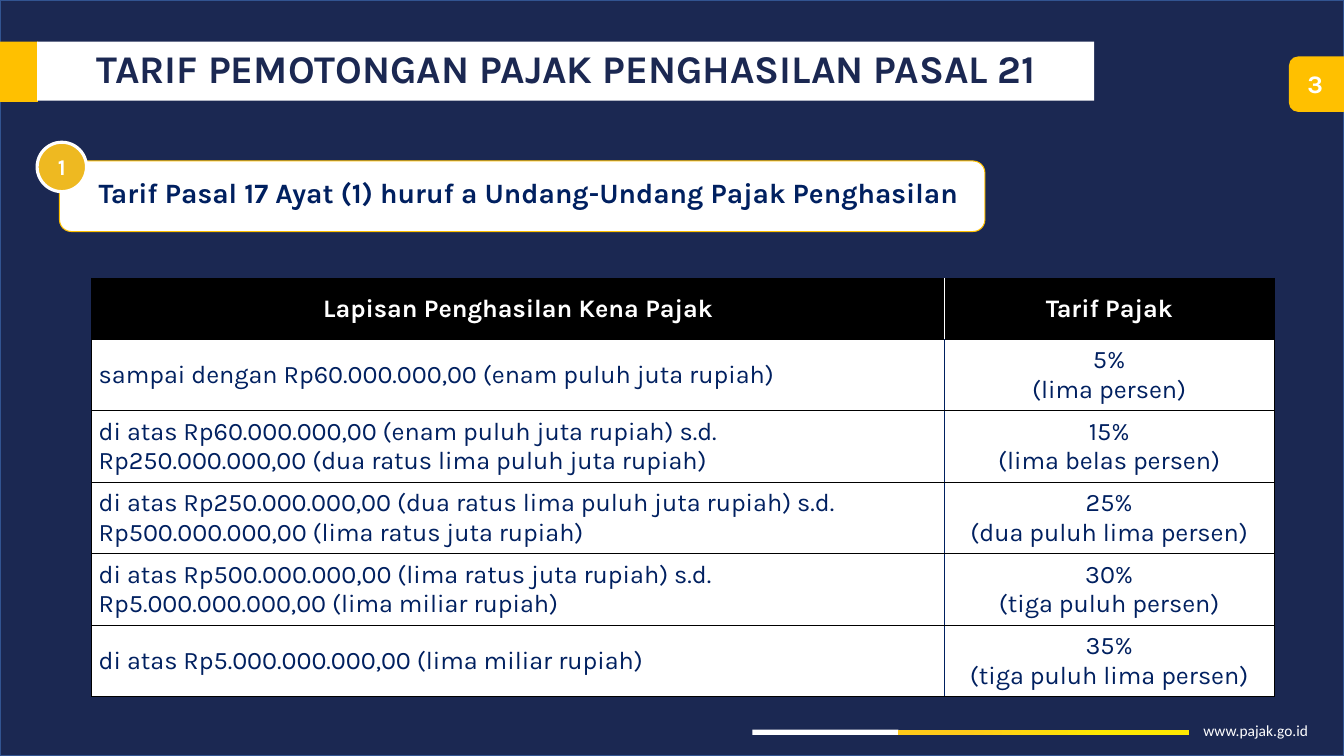
import pptx
import pptx.util
import pptx.dml.color
import pptx.enum.shapes
import pptx.enum.text
import pptx.oxml

Pt = pptx.util.Pt
RGB = pptx.dml.color.RGBColor.from_string
SHAPE = pptx.enum.shapes.MSO_SHAPE
ALIGN = pptx.enum.text.PP_ALIGN
MIDDLE = pptx.enum.text.MSO_ANCHOR.MIDDLE
COLORS = {
    "night": "1B2852", "edge": "325491", "amber": "FFC000", "gold": "EEB921",
    "sun": "FFCA1A", "lemon": "FEE801", "navy": "002060", "white": "FFFFFF", "black": "000000",
}

deck = pptx.Presentation()
deck.slide_width, deck.slide_height = Pt(960), Pt(540)
slide = deck.slides.add_slide(deck.slide_layouts[6])


def add_block(kind, left, top, width, height, fill, line=None, line_width=1):
    block = slide.shapes.add_shape(kind, Pt(left), Pt(top), Pt(width), Pt(height))
    block.shadow.inherit = False
    block.fill.solid()
    block.fill.fore_color.rgb = RGB(COLORS[fill])
    if line:
        block.line.color.rgb = RGB(COLORS[line])
        block.line.width = Pt(line_width)
    else:
        block.line.fill.background()
    return block


def write(frame, lines, size, color, bold=False, align=ALIGN.CENTER, font="Karla"):
    """Fill a text frame with one single-run paragraph per line."""
    frame.word_wrap = True
    for number, line in enumerate(lines):
        paragraph = frame.add_paragraph() if number else frame.paragraphs[0]
        paragraph.alignment = align
        run = paragraph.add_run()
        run.text = line
        run.font.name = font
        run.font.size = Pt(size)
        run.font.bold = bold
        run.font.color.rgb = RGB(COLORS[color])


# Background and page number
add_block(SHAPE.RECTANGLE, 0, 0, 960, 540, "night", "edge")
add_block(SHAPE.ROUNDED_RECTANGLE, 920.7, 40.3, 75, 39.6, "amber")
page_number = slide.shapes.add_textbox(Pt(919.4), Pt(45.4), Pt(40.3), Pt(29))
write(page_number.text_frame, ["3"], 18, "white", True)

# Footer
add_block(SHAPE.RECTANGLE, 537.5, 521.2, 104.2, 3.7, "white")
footer_stripe = add_block(SHAPE.RECTANGLE, 641.5, 521.2, 208, 3.7, "sun")
footer_stripe.fill.gradient()
footer_stripe.fill.gradient_angle = 0
for stop, position, color in zip(footer_stripe.fill.gradient_stops, (0.23, 0.71), ("sun", "lemon")):
    stop.position = position
    stop.color.rgb = RGB(COLORS[color])
website = slide.shapes.add_textbox(Pt(852.5), Pt(511.2), Pt(104.4), Pt(20.6))
write(website.text_frame, ["www.pajak.go.id"], 11, "white", align=ALIGN.LEFT, font="Calibri")

# Title
add_block(SHAPE.RECTANGLE, -11.5, 29.7, 38.6, 43, "amber")
title = add_block(SHAPE.RECTANGLE, 26.6, 29.7, 755, 42.3, "white")
title.text_frame.vertical_anchor = MIDDLE
write(title.text_frame, ["TARIF PEMOTONGAN PAJAK PENGHASILAN PASAL 21"], 28, "night", True)
title.text_frame.paragraphs[0].line_spacing = 0.9

# Numbered heading
heading_panel = add_block(SHAPE.ROUNDED_RECTANGLE, 42.5, 115, 661, 50.4, "white", "amber", 0.75)
heading_panel.adjustments[0] = 0.167
heading = slide.shapes.add_textbox(Pt(65.5), Pt(122.4), Pt(640), Pt(47.5))
write(heading.text_frame, ["Tarif Pasal 17 Ayat (1) huruf a Undang-Undang Pajak Penghasilan"],
      20, "navy", True, ALIGN.JUSTIFY)
heading_number = add_block(SHAPE.OVAL, 26.5, 101.6, 35.3, 35.3, "gold", "white", 2.25)
heading_number.text_frame.vertical_anchor = MIDDLE
write(heading_number.text_frame, ["1"], 16, "white", True)
for frame in (heading.text_frame, heading_number.text_frame):
    frame.margin_left = frame.margin_right = Pt(5)
    frame.margin_top = frame.margin_bottom = Pt(2.9)

# Tax rates by income layer
rates = [
    (["Lapisan Penghasilan Kena Pajak"], ["Tarif Pajak"]),
    (["sampai dengan Rp60.000.000,00 (enam puluh juta rupiah)"], ["5%", "(lima persen)"]),
    (["di atas Rp60.000.000,00 (enam puluh juta rupiah) s.d.",
      "Rp250.000.000,00 (dua ratus lima puluh juta rupiah)"], ["15%", "(lima belas persen)"]),
    (["di atas Rp250.000.000,00 (dua ratus lima puluh juta rupiah) s.d.",
      "Rp500.000.000,00 (lima ratus juta rupiah)"], ["25%", "(dua puluh lima persen)"]),
    (["di atas Rp500.000.000,00 (lima ratus juta rupiah) s.d.",
      "Rp5.000.000.000,00 (lima miliar rupiah)"], ["30%", "(tiga puluh persen)"]),
    (["di atas Rp5.000.000.000,00 (lima miliar rupiah)"], ["35%", "(tiga puluh lima persen)"]),
]
rate_table = slide.shapes.add_table(len(rates), 2, Pt(65.5), Pt(198.8), Pt(844.6), Pt(299)).table
rate_table.horz_banding = False
for column, width in zip(rate_table.columns, (609.1, 235.5)):
    column.width = Pt(width)
for row, layer in enumerate(rates):
    is_header = row == 0
    rate_table.rows[row].height = Pt(43.5 if is_header else 51.1)
    for col, lines in enumerate(layer):
        cell = rate_table.cell(row, col)
        cell.vertical_anchor = MIDDLE
        cell.margin_left = cell.margin_right = Pt(5)
        cell.margin_top = cell.margin_bottom = 0
        divider = "R" if col == 0 else "L"
        for side in "LRTB":
            color, width = ("black", 0.5)
            if side == divider:
                color, width = ("white" if is_header else "navy", 1)
            cell._tc.get_or_add_tcPr().append(pptx.oxml.parse_xml(
                f'<a:ln{side} xmlns:a="http://schemas.openxmlformats.org/drawingml/2006/main" '
                f'w="{Pt(width)}"><a:solidFill><a:srgbClr val="{COLORS[color]}"/></a:solidFill>'
                f'</a:ln{side}>'))
        cell.fill.solid()
        cell.fill.fore_color.rgb = RGB(COLORS["black" if is_header else "white"])
        align = ALIGN.CENTER if is_header or col else ALIGN.LEFT
        write(cell.text_frame, lines, 18, "white" if is_header else "navy", is_header, align)

deck.save("out.pptx")
